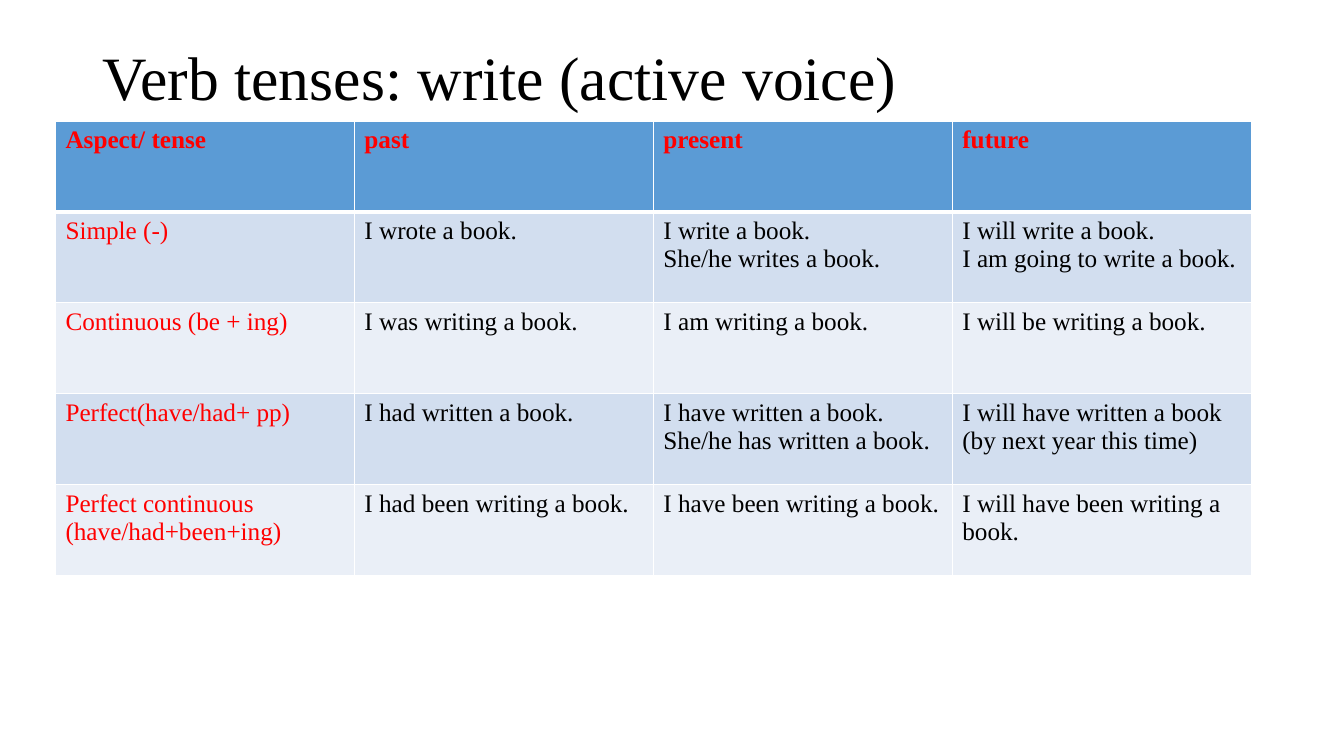
from lxml.etree import SubElement as Sub
from pptx import Presentation
from pptx.dml.color import RGBColor as RGB
from pptx.enum.text import MSO_ANCHOR as Anchor, PP_ALIGN as Align
from pptx.oxml.ns import qn
from pptx.util import Inches, Pt

BLACK = RGB(0x00, 0x00, 0x00)
RED = RGB(0xFF, 0x00, 0x00)
WHITE = RGB(0xFF, 0xFF, 0xFF)
BLUE = RGB(0x5B, 0x9B, 0xD5)
BANDS = [RGB(0xEA, 0xEF, 0xF7), RGB(0xD2, 0xDE, 0xEF)]
FONT = "Times New Roman"

TENSES = [
    ["Aspect/ tense", "past", "present", "future"],
    ["Simple (-)", "I wrote a book.",
     "I write a book.\nShe/he writes a book.",
     "I will write a book.\nI am going to write a book."],
    ["Continuous (be + ing)", "I was writing a book.",
     "I am writing a book.", "I will be writing a book."],
    ["Perfect(have/had+ pp)", "I had written a book.",
     "I have written a book.\nShe/he has written a book.",
     "I will have written a book\n(by next year this time)"],
    ["Perfect continuous (have/had+been+ing)", "I had been writing a book.",
     "I have been writing a book.", "I will have been writing a book."],
]


def add_run(para, text, size, color, bold=False):
    run = para.add_run()
    run.text = text
    font = run.font
    font.name, font.size, font.bold = FONT, Pt(size), bold
    font.color.rgb = color


def add_edge(cell, side, width):
    props = cell._tc.get_or_add_tcPr()
    line = Sub(props, qn(f"a:{side}"), w=str(Pt(width)))
    fill = Sub(line, qn("a:solidFill"))
    Sub(fill, qn("a:srgbClr"), val=str(WHITE))


deck = Presentation()
deck.slide_width, deck.slide_height = Inches(13.33), Inches(7.5)
slide = deck.slides.add_slide(deck.slide_layouts[5])

title = slide.shapes.title
title.left, title.top = Inches(0.92), Inches(0.4)
title.width, title.height = Inches(11.5), Inches(0.8)
frame = title.text_frame
frame.vertical_anchor = Anchor.MIDDLE
para = frame.paragraphs[0]
para.alignment = Align.LEFT
para.line_spacing = 0.9
add_run(para, "Verb tenses: write (active voice)", 44, BLACK)

rows, cols = len(TENSES), len(TENSES[0])
table = slide.shapes.add_table(
    rows, cols, Inches(0.55), Inches(1.2), Inches(11.86), Inches(4.51)).table

for r, words in enumerate(TENSES):
    for c, text in enumerate(words):
        cell = table.cell(r, c)
        for side in ["lnL", "lnR", "lnT", "lnB"]:
            thick = (r, side) in [(0, "lnB"), (1, "lnT")]
            add_edge(cell, side, 3 if thick else 1)
        cell.fill.solid()
        cell.fill.fore_color.rgb = BANDS[r % 2] if r else BLUE
        frame = cell.text_frame
        for n, line in enumerate(text.split("\n")):
            para = frame.add_paragraph() if n else frame.paragraphs[0]
            add_run(para, line, 18, BLACK if r and c else RED, r == 0)

deck.save("out.pptx")
